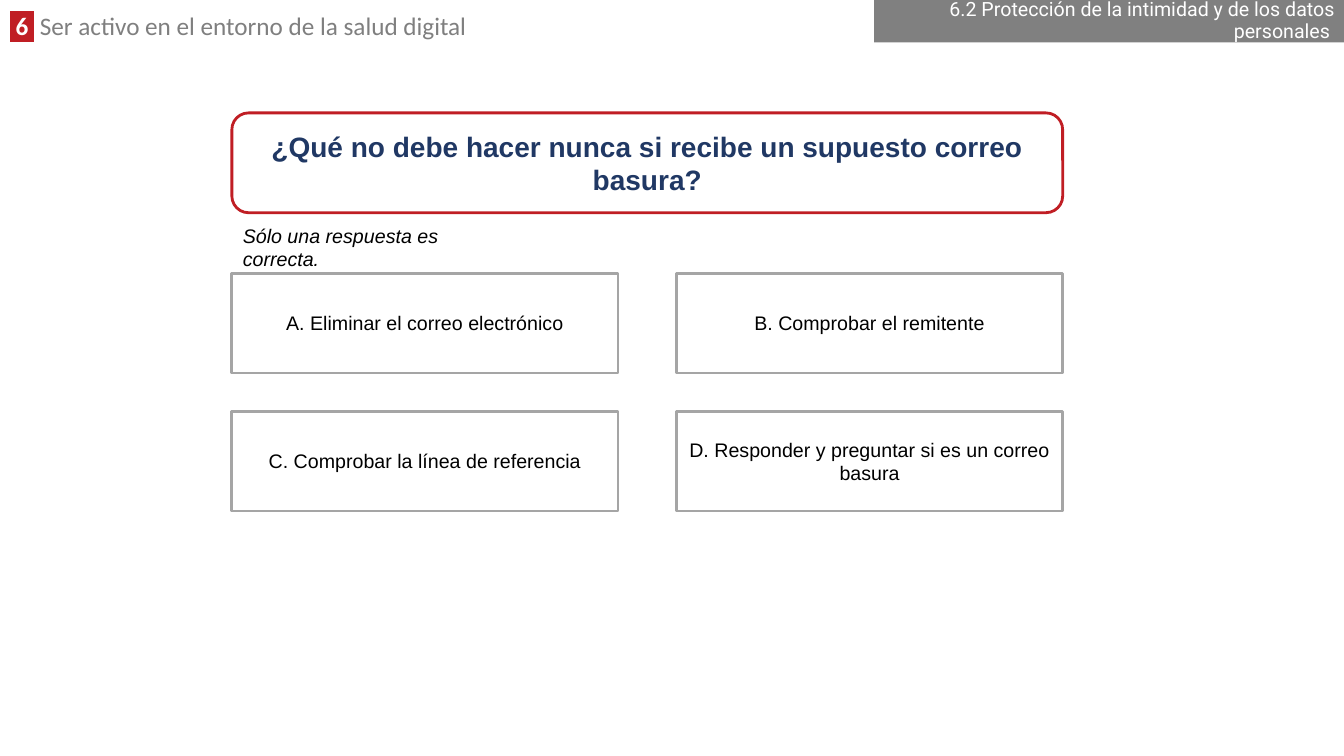
from dataclasses import dataclass
from typing import Optional

from lxml import etree
from pptx import Presentation
from pptx.dml.color import RGBColor
from pptx.enum.shapes import MSO_SHAPE
from pptx.enum.text import MSO_ANCHOR, PP_ALIGN
from pptx.oxml.ns import qn
from pptx.util import Inches, Pt

RECTANGLE = MSO_SHAPE.RECTANGLE
ROUNDED = MSO_SHAPE.ROUNDED_RECTANGLE
MIDDLE = MSO_ANCHOR.MIDDLE
CENTER = PP_ALIGN.CENTER
RIGHT = PP_ALIGN.RIGHT

WHITE = RGBColor(0xFF, 0xFF, 0xFF)
BLACK = RGBColor(0x00, 0x00, 0x00)
RED = RGBColor(0xC0, 0x1E, 0x24)
NAVY = RGBColor(0x20, 0x38, 0x64)
BANNER_GRAY = RGBColor(0x80, 0x80, 0x80)
TITLE_GRAY = RGBColor(0x7F, 0x7F, 0x7F)
BORDER_GRAY = RGBColor(0xA5, 0xA5, 0xA5)

GRID_LEFT, GRID_TOP = 2.3, 2.71
COLUMN_STEP, ROW_STEP = 4.41, 1.37
ANSWER_WIDTH, BOX_HEIGHT = 3.83, 0.99

ANSWERS = [
    "A. Eliminar el correo electrónico",
    "B. Comprobar el remitente",
    "C. Comprobar la línea de referencia",
    "D. Responder y preguntar si es un correo basura",
]


@dataclass
class Panel:
    text: str
    left: float
    top: float
    width: float
    height: float
    fill: RGBColor = WHITE
    border: Optional[RGBColor] = BORDER_GRAY
    kind: MSO_SHAPE = RECTANGLE
    font: str = "Arial"
    size: int = 14
    color: RGBColor = BLACK
    bold: bool = False
    align: PP_ALIGN = CENTER
    line_spacing: float = 1.0


def add_panel(slide, panel: Panel) -> None:
    shape = slide.shapes.add_shape(
        panel.kind, Inches(panel.left), Inches(panel.top),
        Inches(panel.width), Inches(panel.height))
    shape.shadow.inherit = False
    shape.fill.solid()
    shape.fill.fore_color.rgb = panel.fill
    if panel.border is None:
        shape.line.fill.background()
    else:
        shape.line.color.rgb = panel.border
        shape.line.width = Pt(2)

    frame = shape.text_frame
    frame.word_wrap = True
    frame.vertical_anchor = MIDDLE
    para = frame.paragraphs[0]
    para.text = panel.text
    para.alignment = panel.align
    para.line_spacing = panel.line_spacing
    para.font.name = panel.font
    para.font.size = Pt(panel.size)
    para.font.bold = panel.bold
    para.font.color.rgb = panel.color


def add_text_paragraph(slide, left: float, top: float, width: float, height: float):
    """Add a wrapping text box and return its first paragraph."""
    box = slide.shapes.add_textbox(
        Inches(left), Inches(top), Inches(width), Inches(height))
    box.text_frame.word_wrap = True
    return box.text_frame.paragraphs[0]


def highlight(span, color: RGBColor) -> None:
    """Put a background colour behind a run whose font colour is set."""
    fill = span.font.fill
    fill.solid()
    fill.fore_color.rgb = WHITE
    mark = etree.Element(qn("a:highlight"))
    etree.SubElement(mark, qn("a:srgbClr"), val=str(color))
    span._r.get_or_add_rPr().find(qn("a:solidFill")).addnext(mark)


def add_chapter_title(slide) -> None:
    para = add_text_paragraph(slide, 0, 0.11, 5.71, 0.34)
    para.line_spacing = 0.8
    para.font.name = "Calibri"
    para.font.size = Pt(18)

    number = para.add_run()
    number.text = " 6 "
    number.font.bold = True
    highlight(number, RED)

    title = para.add_run()
    title.text = " Ser activo en el entorno de la salud digital"
    title.font.color.rgb = TITLE_GRAY


def add_hint(slide) -> None:
    para = add_text_paragraph(slide, 2.31, 2.17, 2.36, 0.34)
    para.text = "Sólo una respuesta es correcta."
    para.font.name = "Arial"
    para.font.size = Pt(14)
    para.font.italic = True
    para.font.color.rgb = BLACK


def main() -> None:
    deck = Presentation()
    deck.slide_width = Inches(13.33)
    deck.slide_height = Inches(7.5)
    slide = deck.slides.add_slide(deck.slide_layouts[6])

    add_chapter_title(slide)
    add_panel(slide, Panel(
        "¿Qué no debe hacer nunca si recibe un supuesto correo basura?",
        GRID_LEFT, 1.12, COLUMN_STEP + ANSWER_WIDTH, BOX_HEIGHT,
        border=RED, kind=ROUNDED, size=20, color=NAVY, bold=True))
    for index, answer in enumerate(ANSWERS):
        row, column = divmod(index, 2)
        add_panel(slide, Panel(
            answer, GRID_LEFT + column * COLUMN_STEP, GRID_TOP + row * ROW_STEP,
            ANSWER_WIDTH, BOX_HEIGHT))
    add_hint(slide)
    add_panel(slide, Panel(
        "6.2 Protección de la intimidad y de los datos personales ",
        8.67, 0, 4.67, 0.42, fill=BANNER_GRAY, border=None,
        font="Roboto", color=WHITE, align=RIGHT, line_spacing=0.9))

    deck.save("out.pptx")


if __name__ == "__main__":
    main()
